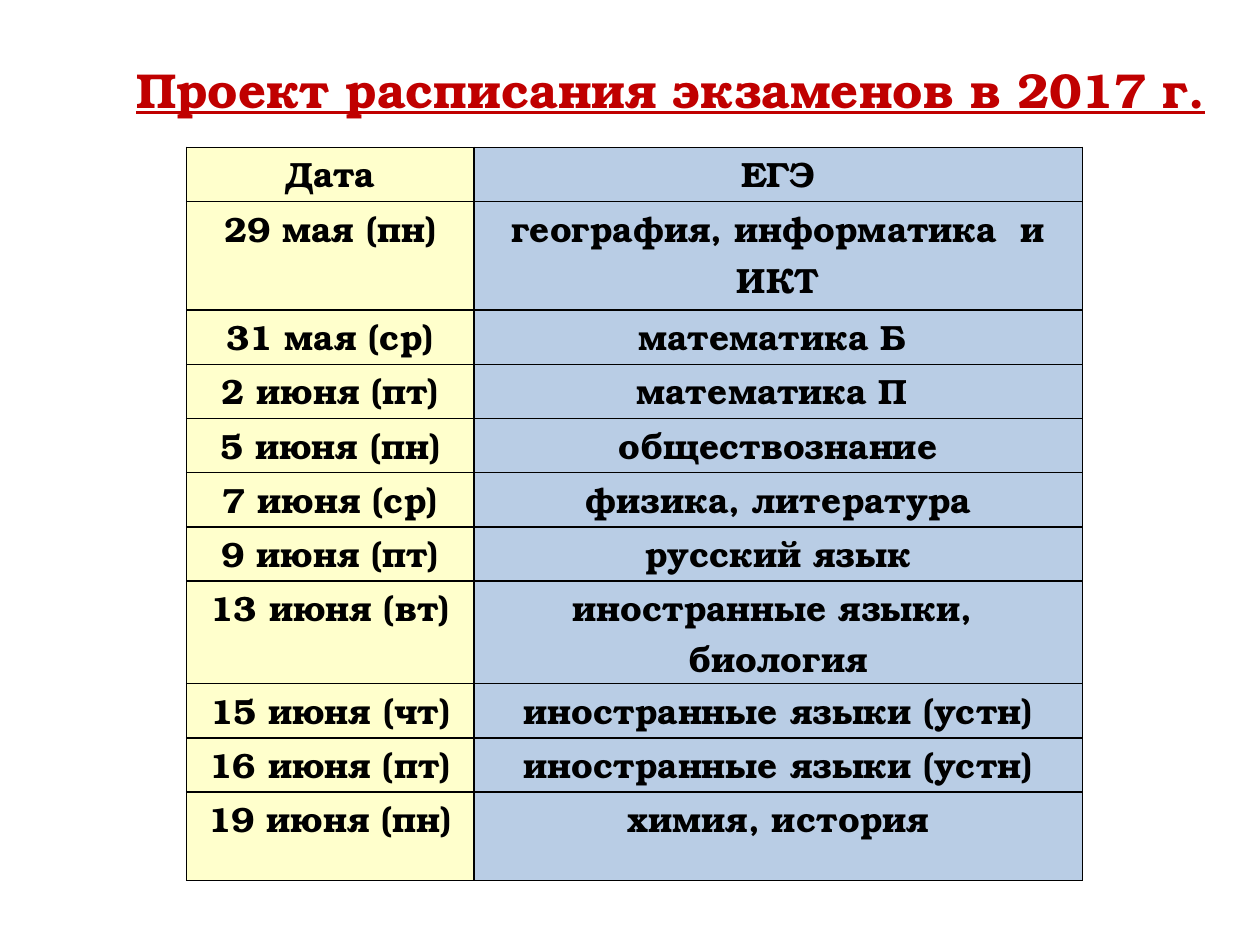
import pptx
import pptx.dml.color
import pptx.enum.text
import pptx.oxml.ns
import pptx.util
from lxml import etree

Pt = pptx.util.Pt
RGBColor = pptx.dml.color.RGBColor
CENTER = pptx.enum.text.PP_ALIGN.CENTER
TOP = pptx.enum.text.MSO_ANCHOR.TOP
qn = pptx.oxml.ns.qn

FONT = "TeX Gyre Bonum"
BLACK = RGBColor(0, 0, 0)
RED = RGBColor(0xC0, 0, 0)
CREAM = RGBColor(0xFF, 0xFF, 0xCC)
BLUE = RGBColor(0xB9, 0xCD, 0xE5)

COLUMN_WIDTHS = (164.2, 347.8)
# Date, exams, row height
SCHEDULE = [
    ("Дата", "ЕГЭ", 31),
    ("29 мая (пн)", "география, информатика  и ИКТ", 62),
    ("31 мая (ср)", "математика Б ", 31),
    ("2 июня (пт)", "математика П ", 31),
    ("5 июня (пн)", "обществознание", 31),
    ("7 июня (ср)", "физика, литература", 31),
    ("9 июня (пт)", "русский язык", 31),
    ("13 июня (вт)", "иностранные языки, \nбиология", 50.4),
    ("15 июня (чт)", "иностранные языки (устн)", 31),
    ("16 июня (пт)", "иностранные языки (устн)", 31),
    ("19 июня (пн)", "химия, история", 50.4),
]


def style_paragraph(para, size, color):
    para.alignment = CENTER
    para.font.name = FONT
    para.font.size = Pt(size)
    para.font.bold = True
    para.font.color.rgb = color


def add_title(page, left, top, width, height):
    title = page.shapes.title
    title.left, title.top = Pt(left), Pt(top)
    title.width, title.height = Pt(width), Pt(height)
    frame = title.text_frame
    frame.text = "Проект расписания экзаменов в 2017 г."
    frame.word_wrap = True
    frame.auto_size = pptx.enum.text.MSO_AUTO_SIZE.NONE
    frame.vertical_anchor = TOP
    frame.margin_top = frame.margin_bottom = 0
    para = frame.paragraphs[0]
    # Hanging indent
    properties = para._p.get_or_add_pPr()
    properties.set("marL", str(Pt(63)))
    properties.set("indent", str(Pt(-27)))
    style_paragraph(para, 28, RED)
    para.font.underline = True


def add_borders(cell, color, width):
    properties = cell._tc.get_or_add_tcPr()
    for index, side in enumerate(("lnL", "lnR", "lnT", "lnB")):
        line = etree.Element(qn(f"a:{side}"), w=str(Pt(width)))
        fill = etree.SubElement(line, qn("a:solidFill"))
        etree.SubElement(fill, qn("a:srgbClr"), val=str(color))
        properties.insert(index, line)


def fill_cell(cell, text, color):
    cell.text = text
    cell.margin_left = cell.margin_right = Pt(5)
    cell.margin_top = cell.margin_bottom = 0
    cell.vertical_anchor = TOP
    cell.fill.solid()
    cell.fill.fore_color.rgb = color
    add_borders(cell, BLACK, 1)
    for para in cell.text_frame.paragraphs:
        style_paragraph(para, 20, BLACK)


def add_schedule(page, left, top):
    width = sum(COLUMN_WIDTHS)
    height = sum(row[2] for row in SCHEDULE)
    table = page.shapes.add_table(
        len(SCHEDULE), len(COLUMN_WIDTHS), Pt(left), Pt(top), Pt(width), Pt(height)
    ).table
    table.first_row = table.horz_banding = False
    for column, column_width in zip(table.columns, COLUMN_WIDTHS):
        column.width = Pt(column_width)
    for row, (date, exams, row_height) in zip(table.rows, SCHEDULE):
        row.height = Pt(row_height)
        fill_cell(row.cells[0], date, CREAM)
        fill_cell(row.cells[1], exams, BLUE)


def main():
    deck = pptx.Presentation()
    deck.slide_width, deck.slide_height = Pt(720), Pt(540)
    page = deck.slides.add_slide(deck.slide_layouts[5])
    add_title(page, 22.3, 33.8, 686.2, 33.8)
    add_schedule(page, 106.6, 84.2)
    deck.save("out.pptx")


if __name__ == "__main__":
    main()
